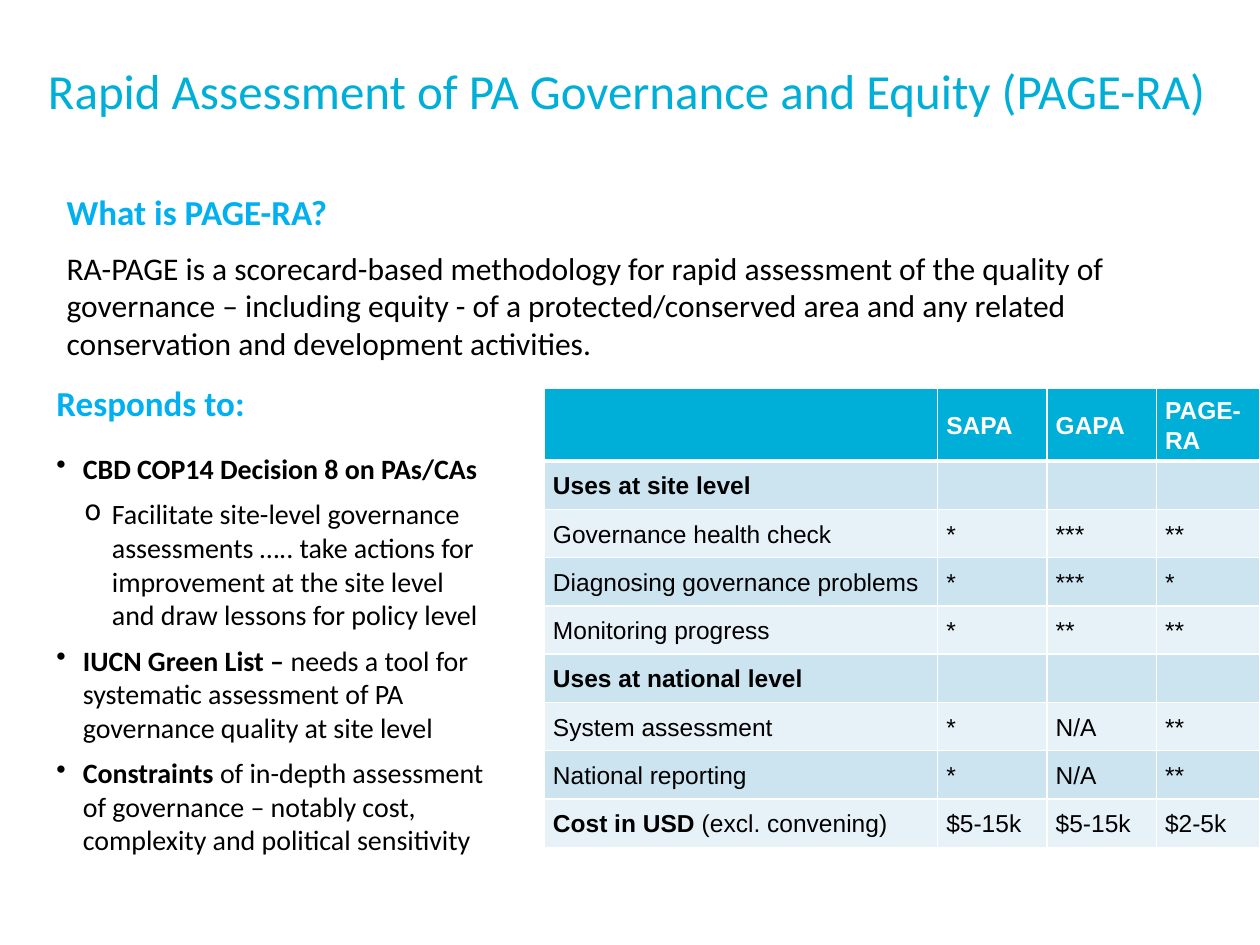
from lxml.etree import SubElement
from pptx import Presentation
from pptx.dml.color import RGBColor as RGB
from pptx.enum.text import MSO_ANCHOR as Anchor, MSO_AUTO_SIZE as AutoSize, PP_ALIGN as Align
from pptx.oxml.ns import qn
from pptx.util import Pt

COLORS = {
    "title": "00AFD8", "heading": "00B0F0", "text": "000000", "white": "FFFFFF",
    "header": "00AFD8", "band_dark": "CCE3F0", "band_light": "E7F2F8",
}

INTRO = ("RA-PAGE is a scorecard-based methodology for rapid assessment of the quality of "
         "governance – including equity - of a protected/conserved area and any related "
         "conservation and development activities.")

# Bullet level, bold part, plain part
RESPONSES = [
    (1, "CBD COP14 Decision 8 on PAs/CAs", ""),
    (2, "", "Facilitate site-level governance assessments ….. take actions for "
            "improvement at the site level and draw lessons for policy level"),
    (1, "IUCN Green List – ", "needs a tool for systematic assessment of PA "
                              "governance quality at site level"),
    (1, "Constraints ", "of in-depth assessment of governance – notably cost, "
                        "complexity and political sensitivity"),
]
# Bullet character, text indent, hanging indent
BULLETS = {1: ("•", 15.1, 15.1), 2: ("o", 31.7, 15.8)}

# Bold part and plain part of the label, then the ratings
TOOLS = ["SAPA", "GAPA", "PAGE-RA"]
USES = [
    ("Uses at site level", "", ["", "", ""]),
    ("", "Governance health check", ["*", "***", "**"]),
    ("", "Diagnosing governance problems", ["*", "***", "*"]),
    ("", "Monitoring progress", ["*", "**", "**"]),
    ("Uses at national level", "", ["", "", ""]),
    ("", "System assessment", ["*", "N/A", "**"]),
    ("", "National reporting", ["*", "N/A", "**"]),
    ("Cost in USD ", "(excl. convening)", ["$5-15k", "$5-15k", "$2-5k"]),
]
COL_WIDTHS = [224.8, 62.5, 62.5, 59]
ROW_HEIGHT = 27.6


def add_run(p, text, size, color, bold=False, font="Calibri"):
    if not text:
        return
    r = p.add_run()
    r.text = text
    r.font.size, r.font.name, r.font.bold = Pt(size), font, bold
    r.font.color.rgb = RGB.from_string(COLORS[color])


def add_title(slide, text):
    sp = slide.shapes.title
    sp.left, sp.top, sp.width, sp.height = Pt(20.2), Pt(25.2), Pt(687), Pt(52.6)
    tf = sp.text_frame
    tf.auto_size, tf.vertical_anchor = AutoSize.NONE, Anchor.MIDDLE
    p = tf.paragraphs[0]
    p.alignment, p.space_after = Align.LEFT, Pt(9)
    add_run(p, text, 28, "title")


def add_section(slide, heading, left, top, width, height, anchor):
    """Text box that opens with a coloured heading."""
    tf = slide.shapes.add_textbox(Pt(left), Pt(top), Pt(width), Pt(height)).text_frame
    tf.word_wrap, tf.vertical_anchor = True, anchor
    p = tf.paragraphs[0]
    p.space_after = Pt(9)
    add_run(p, heading, 20, "heading", bold=True)
    return tf


def add_bullet(tf, level, strong, plain):
    char, indent, hanging = BULLETS[level]
    p = tf.add_paragraph()
    p.level = level - 1
    p.space_before = Pt(6.8)
    pPr = p._p.get_or_add_pPr()
    pPr.set("marL", str(Pt(indent)))
    pPr.set("indent", str(-Pt(hanging)))
    SubElement(pPr, qn("a:buChar"), char=char)
    add_run(p, strong, 16, "text", bold=True)
    add_run(p, plain, 16, "text")


def add_border(cell, side, width):
    ln = SubElement(cell._tc.get_or_add_tcPr(), qn(f"a:ln{side}"), w=str(Pt(width)))
    fill = SubElement(ln, qn("a:solidFill"))
    SubElement(fill, qn("a:srgbClr"), val=COLORS["white"])


def format_cell(cell, fill, top=1, bottom=1):
    for side, width in (("L", 1), ("R", 1), ("T", top), ("B", bottom)):
        add_border(cell, side, width)
    cell.fill.solid()
    cell.fill.fore_color.rgb = RGB.from_string(COLORS[fill])
    cell.vertical_anchor = Anchor.MIDDLE
    cell.margin_left = cell.margin_right = Pt(5)
    cell.margin_top = cell.margin_bottom = Pt(2.7)


def fill_cell(cell, strong, plain, color):
    p = cell.text_frame.paragraphs[0]
    if strong or plain:
        p.line_spacing = 1.08
    add_run(p, strong, 14, color, bold=True, font="Arial")
    add_run(p, plain, 14, color, font="Arial")


def add_uses_table(slide, left, top):
    n_rows = len(USES) + 1
    table = slide.shapes.add_table(n_rows, len(COL_WIDTHS), Pt(left), Pt(top),
                                   Pt(sum(COL_WIDTHS)), Pt(ROW_HEIGHT * n_rows)).table
    for col, width in zip(table.columns, COL_WIDTHS):
        col.width = Pt(width)
    for row in table.rows:
        row.height = Pt(ROW_HEIGHT)

    # Header row
    for c, name in enumerate([""] + TOOLS):
        format_cell(table.cell(0, c), "header", bottom=3)
        fill_cell(table.cell(0, c), name, "", "white")

    # Banded body rows
    for r, (strong, plain, ratings) in enumerate(USES, start=1):
        band = "band_dark" if r % 2 else "band_light"
        for c, parts in enumerate([(strong, plain)] + [("", x) for x in ratings]):
            format_cell(table.cell(r, c), band, top=3 if r == 1 else 1)
            fill_cell(table.cell(r, c), *parts, "text")


def main():
    prs = Presentation()
    prs.slide_width, prs.slide_height = Pt(720), Pt(540)
    slide = prs.slides.add_slide(prs.slide_layouts[5])

    add_title(slide, "Rapid Assessment of PA Governance and Equity (PAGE-RA)")

    # Left column
    tf = add_section(slide, "Responds to:", 25.2, 214.6, 259.2, 282.2, Anchor.TOP)
    for response in RESPONSES:
        add_bullet(tf, *response)

    # Comparison of the tools
    add_uses_table(slide, 311, 221.8)

    # Introduction
    tf = add_section(slide, "What is PAGE-RA?", 31, 94.3, 666.7, 127.4, Anchor.MIDDLE)
    p = tf.add_paragraph()
    p.space_after = Pt(9)
    add_run(p, INTRO, 18, "text")

    prs.save("out.pptx")


if __name__ == "__main__":
    main()
